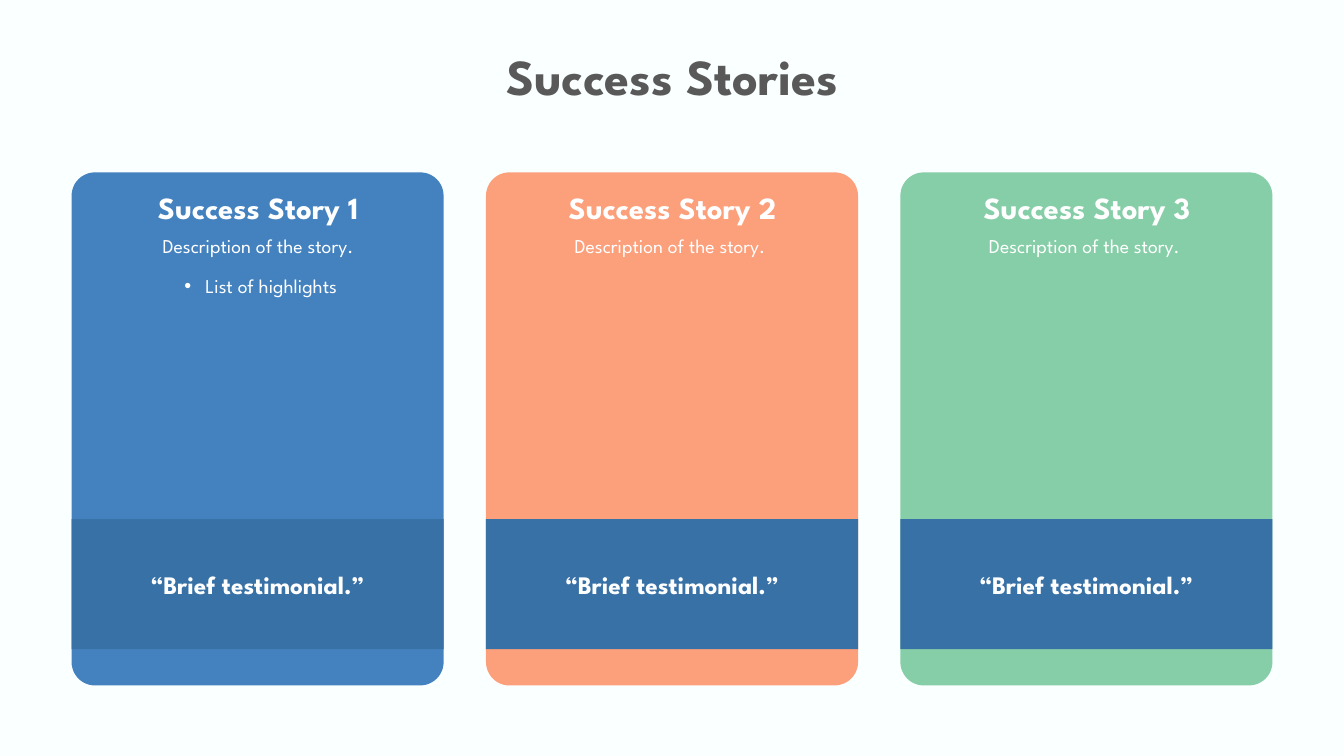
from lxml.etree import SubElement
from pptx import Presentation
from pptx.dml.color import RGBColor
from pptx.enum.shapes import MSO_SHAPE
from pptx.enum.text import MSO_ANCHOR, MSO_AUTO_SIZE, PP_ALIGN
from pptx.oxml.ns import qn
from pptx.util import Pt

PX = 9144  # 100 px to the inch
FONT = "League Spartan"
WHITE = "FFFFFF"
STORIES = [
    ("4482BF", "Success Story 1", "Description of the story.", ["List of highlights "]),
    ("FC9F7B", "Success Story 2", "Description of the story. ", []),
    ("86CEA7", "Success Story 3", "Description of the story. ", []),
]


def color(code):
    return RGBColor.from_string(code)


def emu(*box):
    return [n * PX for n in box]


def style(para, text, size, code, bold=False, before=0):
    para.text = text
    para.alignment = PP_ALIGN.CENTER
    para.space_before = Pt(before)
    font = para.font
    font.name, font.size, font.bold = FONT, Pt(size), bold
    font.color.rgb = color(code)


def bullet(para):
    props = para._p.get_or_add_pPr()
    props.set("marL", str(31 * PX))
    props.set("indent", str(-21 * PX))
    SubElement(props, qn("a:buFont"), typeface="Arial")
    SubElement(props, qn("a:buChar"), char="•")


def add_text(slide, box):
    frame = slide.shapes.add_textbox(*emu(*box)).text_frame
    frame.word_wrap = True
    frame.auto_size = MSO_AUTO_SIZE.SHAPE_TO_FIT_TEXT
    return frame


def add_block(slide, kind, box, fill):
    block = slide.shapes.add_shape(kind, *emu(*box))
    block.shadow.inherit = False
    block.fill.solid()
    block.fill.fore_color.rgb = color(fill)
    block.line.fill.background()
    return block


def add_title(slide, box):
    frame = add_text(slide, box)
    style(frame.paragraphs[0], "Success Stories", 36, "595959", True)


def add_card(slide, box, fill, head, about, points):
    left, top, width, height = box
    card = add_block(slide, MSO_SHAPE.ROUNDED_RECTANGLE, box, fill)
    card.adjustments[0] = 0.063

    # Story text
    tall = 88 + 40 * len(points)
    frame = add_text(slide, (left + 26, top + 11, width - 51, tall))
    style(frame.paragraphs[0], head, 22, WHITE, True, 6)
    style(frame.add_paragraph(), about, 14, WHITE, before=6)
    for point in points:
        para = frame.add_paragraph()
        style(para, point, 14, WHITE, before=12)
        bullet(para)

    # Quote band
    band = add_block(slide, MSO_SHAPE.RECTANGLE,
                     (left, top + height - 165, width, 129), "3871A6")
    band.text_frame.vertical_anchor = MSO_ANCHOR.MIDDLE
    style(band.text_frame.paragraphs[0], "“Brief testimonial.”", 18, WHITE, True)


def main():
    deck = Presentation()
    deck.slide_width, deck.slide_height = emu(1333, 750)
    slide = deck.slides.add_slide(deck.slide_layouts[6])
    slide.background.fill.solid()
    slide.background.fill.fore_color.rgb = color("FAFFFF")

    add_title(slide, (71, 40, 1192, 71))
    for i, story in enumerate(STORIES):
        add_card(slide, (71 + 411 * i, 171, 369, 509), *story)
    deck.save("out.pptx")


if __name__ == "__main__":
    main()
